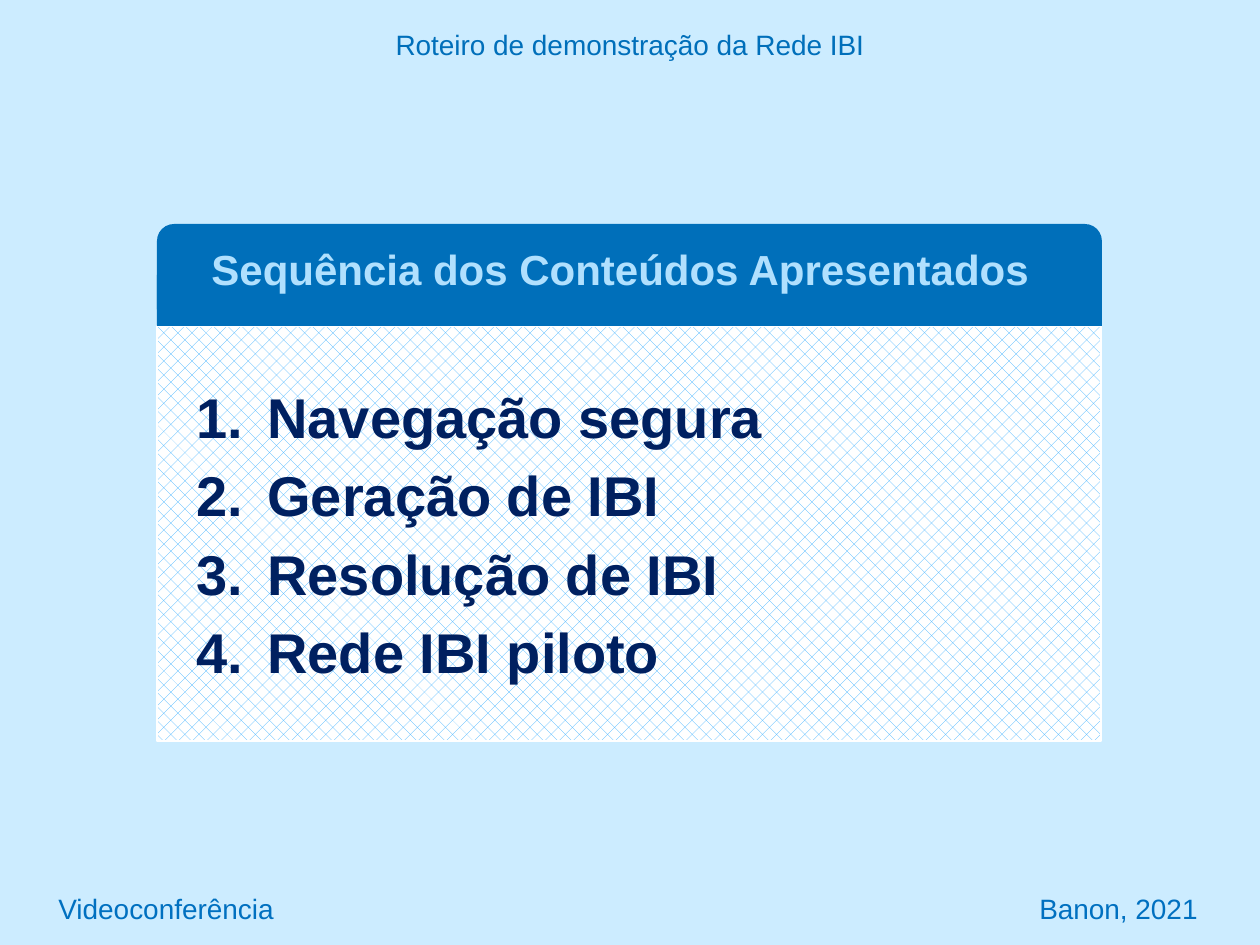
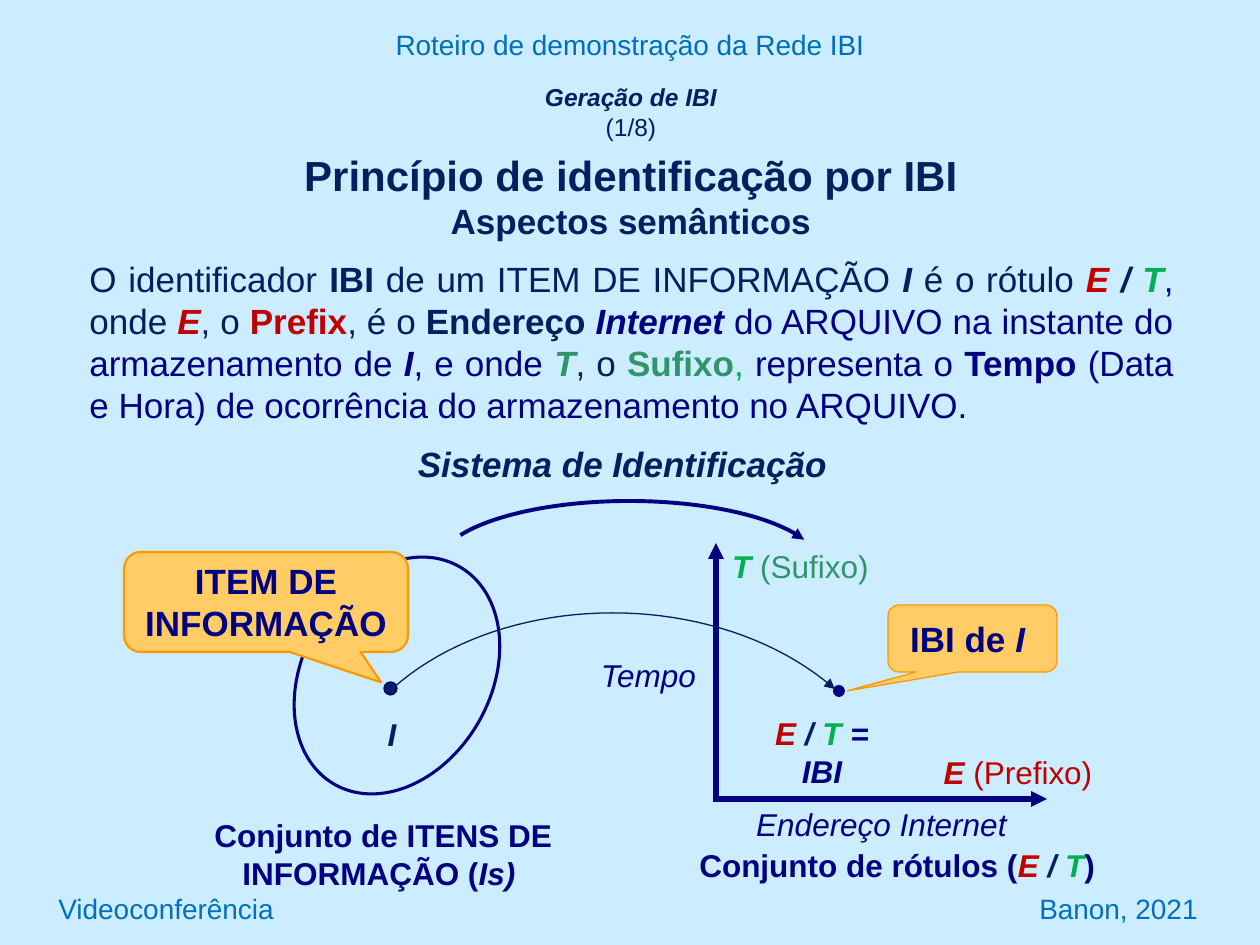
from lxml.etree import SubElement
from pptx import Presentation
from pptx.dml.color import RGBColor
from pptx.enum.dml import MSO_PATTERN
from pptx.enum.shapes import MSO_CONNECTOR, MSO_SHAPE as SHAPE
from pptx.enum.text import MSO_ANCHOR as ANCHOR, PP_ALIGN as ALIGN
from pptx.oxml.ns import qn
from pptx.util import Emu, Pt

PX = 914400 / 126
FONT = "Arial"

SKY = RGBColor(0xCC, 0xEC, 0xFF)
BAND = RGBColor(0x00, 0x6F, 0xBA)
FOOTER = RGBColor(0x00, 0x70, 0xC0)
PALE = RGBColor(0xB0, 0xE0, 0xFE)
HATCH = RGBColor(0x3B, 0xB1, 0xFF)
WHITE = RGBColor(0xFF, 0xFF, 0xFF)
DARK = RGBColor(0x00, 0x20, 0x60)
NAVY = RGBColor(0x00, 0x00, 0x80)
RED = RGBColor(0xC0, 0x00, 0x00)
GREEN = RGBColor(0x00, 0xB0, 0x50)
TEAL = RGBColor(0x32, 0x94, 0x6A)
AMBER = RGBColor(0xFF, 0xCC, 0x66)
ORANGE = RGBColor(0xFF, 0x99, 0x00)


def px(*values):
    return [Emu(round(v * PX)) for v in values]


def add_paragraph(tf, runs, size, align=ALIGN.CENTER, before=0):
    """Each run is (text, colour[, style]); style holds b and/or i."""
    p = tf.paragraphs[0]
    if p.runs:
        p = tf.add_paragraph()
    p.alignment = align
    p.space_before = Pt(before)
    for text, color, *style in runs:
        r = p.add_run()
        r.text = text
        f = r.font
        f.name, f.size, f.color.rgb = FONT, Pt(size), color
        f.bold = "b" in "".join(style)
        f.italic = "i" in "".join(style)
    return p


def add_text(s, box, runs, size, align=ALIGN.CENTER, anchor=ANCHOR.TOP):
    tf = s.shapes.add_textbox(*px(*box)).text_frame
    tf.word_wrap = True
    tf.vertical_anchor = anchor
    add_paragraph(tf, runs, size, align)
    return tf


def style_line(line, color, width, arrow=False):
    line.color.rgb = color
    line.width = Pt(width)
    if arrow:
        SubElement(line._get_or_add_ln(), qn("a:tailEnd"), type="triangle")


def add_shape(s, kind, box, fill=None, line=None, adj=()):
    sp = s.shapes.add_shape(kind, *px(*box))
    sp.shadow.inherit = False
    for i, value in enumerate(adj):
        sp.adjustments[i] = value
    if fill is None:
        sp.fill.background()
    else:
        sp.fill.solid()
        sp.fill.fore_color.rgb = fill
    if line is None:
        sp.line.fill.background()
    else:
        style_line(sp.line, *line)
    return sp


def add_callout(s, box, adj, width, runs):
    sp = add_shape(s, SHAPE.ROUNDED_RECTANGULAR_CALLOUT, box, AMBER,
                   (ORANGE, width), adj)
    tf = sp.text_frame
    tf.word_wrap = True
    tf.vertical_anchor = ANCHOR.MIDDLE
    add_paragraph(tf, runs, 20)


def add_axis(s, start, end):
    c = s.shapes.add_connector(MSO_CONNECTOR.STRAIGHT, *px(*start, *end))
    style_line(c.line, NAVY, 3, arrow=True)
    SubElement(c._element.spPr, qn("a:effectLst"))


def add_curve(s, p0, p1, p2, p3, steps=40):
    """Cubic curve with an arrowhead at its end."""
    def at(t):
        u = 1 - t
        return [u**3 * a + 3 * u * u * t * b + 3 * u * t * t * c + t**3 * d
                for a, b, c, d in zip(p0, p1, p2, p3)]

    points = [px(*at(i / steps)) for i in range(steps + 1)]
    fb = s.shapes.build_freeform(*points[0])
    fb.add_line_segments(points[1:], close=False)
    sp = fb.convert_to_shape()
    sp.shadow.inherit = False
    sp.fill.background()
    style_line(sp.line, DARK, 0.75, arrow=True)


def new_slide(prs):
    """Blank slide with the shared background, heading and footer."""
    s = prs.slides.add_slide(prs.slide_layouts[6])
    s.background.fill.solid()
    s.background.fill.fore_color.rgb = SKY
    add_text(s, (0, 21, 1260, 47),
             [("Roteiro de demonstração da Rede IBI", BAND)], 16)
    for left, text, align in ((46, "Videoconferência", ALIGN.LEFT),
                              (810, "Banon, 2021", ALIGN.RIGHT)):
        add_text(s, (left, 882, 400, 53), [(text, FOOTER)], 16, align,
                 ANCHOR.MIDDLE)
    return s


def contents_slide(prs):
    s = new_slide(prs)

    # Numbered list on a patterned panel
    panel = add_shape(s, SHAPE.RECTANGLE, (157, 326, 944, 415), WHITE,
                      (WHITE, 1.5))
    panel.fill.patterned()
    panel.fill.pattern = MSO_PATTERN.PERCENT_25
    panel.fill.fore_color.rgb = HATCH
    panel.fill.back_color.rgb = WHITE
    tf = panel.text_frame
    tf.word_wrap = True
    tf.vertical_anchor = ANCHOR.MIDDLE
    for topic in ("Navegação segura", "Geração de IBI", "Resolução de IBI",
                  "Rede IBI piloto"):
        p = add_paragraph(tf, [(topic, DARK, "b")], 32, ALIGN.LEFT, 6.4)
        pPr = p._p.get_or_add_pPr()
        margin, indent = px(98, -71)
        pPr.set("marL", str(margin))
        pPr.set("indent", str(indent))
        SubElement(pPr, qn("a:buFont"), typeface=FONT)
        SubElement(pPr, qn("a:buAutoNum"), type="arabicPeriod")

    # Band with rounded top corners
    add_shape(s, SHAPE.RECTANGLE, (157, 275, 945, 51), BAND)
    add_shape(s, SHAPE.ROUNDED_RECTANGLE, (157, 224, 945, 102), BAND,
              adj=[0.167])
    add_text(s, (199, 237, 860, 63),
             [("Sequência dos Conteúdos Apresentados", PALE, "b")], 24,
             ALIGN.LEFT)


def principle_slide(prs):
    s = new_slide(prs)

    # Titles
    tf = add_text(s, (261, 76, 740, 170), [("Geração de IBI", DARK, "bi")], 14)
    add_paragraph(tf, [("(1/8)", DARK)], 14)
    add_paragraph(tf, [("Princípio de identificação por IBI", DARK, "b")], 24,
                  before=4.8)
    add_paragraph(tf, [("Aspectos semânticos", DARK, "b")], 20)

    # Definition
    tf = add_text(s, (77, 257, 1109, 180), [
        ("O identificador ", DARK), ("IBI", DARK, "b"),
        (" de um ITEM DE INFORMAÇÃO ", DARK), ("I", DARK, "bi"),
        (" é o rótulo", DARK), (" E ", RED, "bi"), ("/ ", DARK, "bi"),
        ("T", GREEN, "bi"), (", ", NAVY), ("onde ", DARK), ("E", RED, "bi"),
        (", o ", DARK), ("Prefix", RED, "b"), (", é o ", DARK),
        ("Endereço ", DARK, "b"), ("Internet ", NAVY, "bi"),
        ("do ARQUIVO na instante do armazenamento de ", NAVY),
        ("I", NAVY, "bi"), (", e onde ", NAVY), ("T", TEAL, "bi"),
        (", o ", DARK), ("Sufixo", TEAL, "b"), (", ", GREEN),
        ("representa o ", NAVY), ("Tempo", NAVY, "b"),
        (" (Data e Hora) de ocorrência do armazenamento no ARQUIVO.", NAVY),
    ], 20, ALIGN.JUSTIFY)
    tf.margin_top = tf.margin_bottom = 0

    # Axes of the label set
    add_axis(s, (713, 799), (1047, 799))
    add_axis(s, (716, 799), (716, 543))
    add_shape(s, SHAPE.OVAL, (833, 685, 12, 12), NAVY)

    # Set of items and its mapping to the labels
    item_set = add_shape(s, SHAPE.OVAL, (303, 550, 188, 251),
                         line=(NAVY, 1.75))
    item_set.rotation = 30
    add_shape(s, SHAPE.OVAL, (384, 682, 13, 13), DARK, (NAVY, 0.75))
    add_curve(s, (392, 689), (505, 588), (718, 587), (835, 689))
    add_shape(s, SHAPE.ARC, (437, 501, 384, 131), line=(NAVY, 2.25, True),
              adj=[114.33, 210.79])

    # Callouts
    add_callout(s, (888, 605, 169, 67), [-0.742, 0.782, 0.167], 0.75,
                [("IBI de ", NAVY, "b"), ("I ", NAVY, "bi")])
    add_callout(s, (124, 552, 284, 100), [0.405, 0.804, 0.167], 1.25,
                [("ITEM DE INFORMAÇÃO", NAVY, "b")])

    # Labels
    add_text(s, (399, 436, 447, 55),
             [("Sistema de Identificação", DARK, "bi")], 20)
    labels = [
        ((743, 799, 277, 50), [("Endereço Internet", NAVY, "i")]),
        ((189, 810, 380, 90),
         [(" Conjunto de ITENS DE INFORMAÇÃO (", NAVY, "b"),
          ("Is)", NAVY, "bi")]),
        ((362, 709, 60, 50), [("I", DARK, "bi")]),
        ((747, 708, 150, 90),
         [("E", RED, "bi"), (" / ", DARK, "bi"), ("T ", GREEN, "bi"),
          ("= IBI", NAVY, "bi")]),
        ((709, 541, 174, 50),
         [(" T ", GREEN, "bi"), ("(Sufixo)", TEAL)]),
        ((929, 747, 178, 50), [("E ", RED, "bi"), ("(Prefixo)", RED)]),
        ((578, 650, 141, 50), [("Tempo", NAVY, "i")]),
        ((675, 840, 453, 50),
         [("Conjunto de rótulos (", NAVY, "b"), ("E ", RED, "bi"),
          ("/ ", DARK, "bi"), ("T", GREEN, "bi"), (") ", NAVY, "b")]),
    ]
    for box, runs in labels:
        add_text(s, box, runs, 18)


def main():
    prs = Presentation()
    prs.slide_width, prs.slide_height = px(1260, 945)
    contents_slide(prs)
    principle_slide(prs)
    prs.save("out.pptx")


if __name__ == "__main__":
    main()
